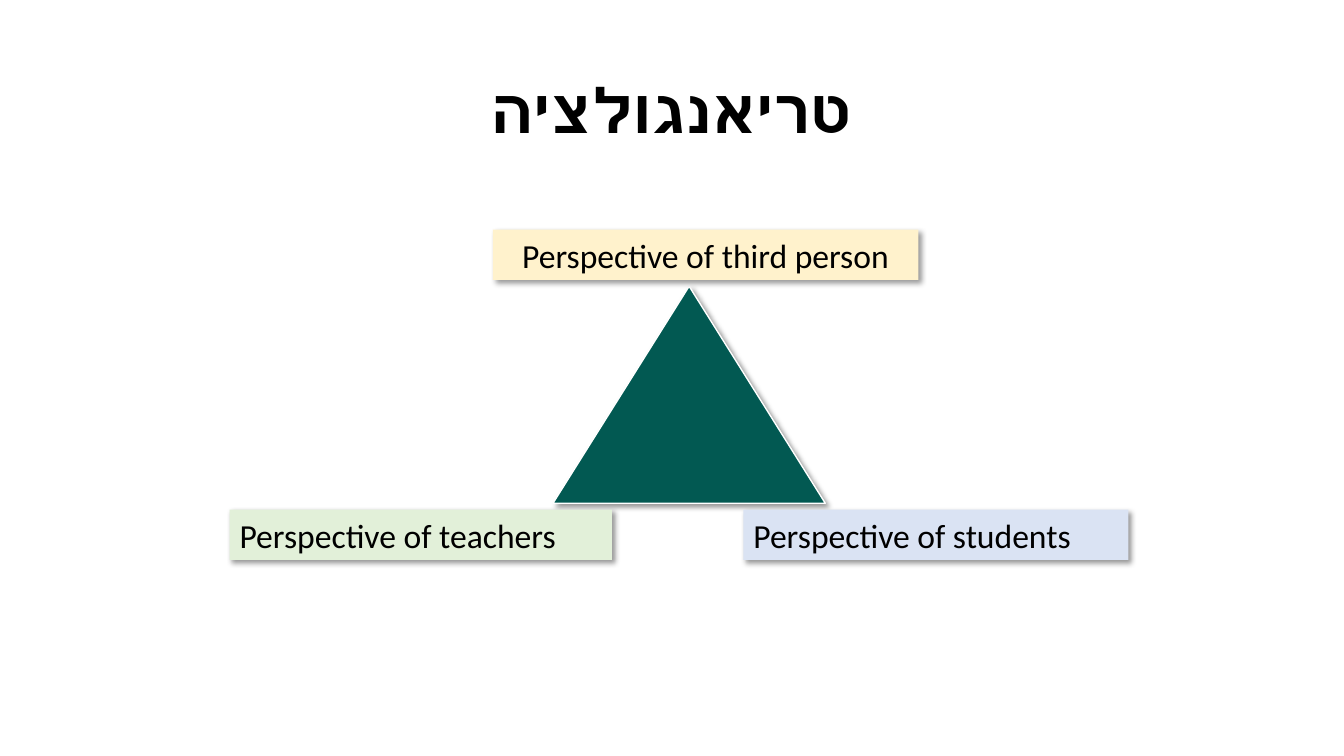
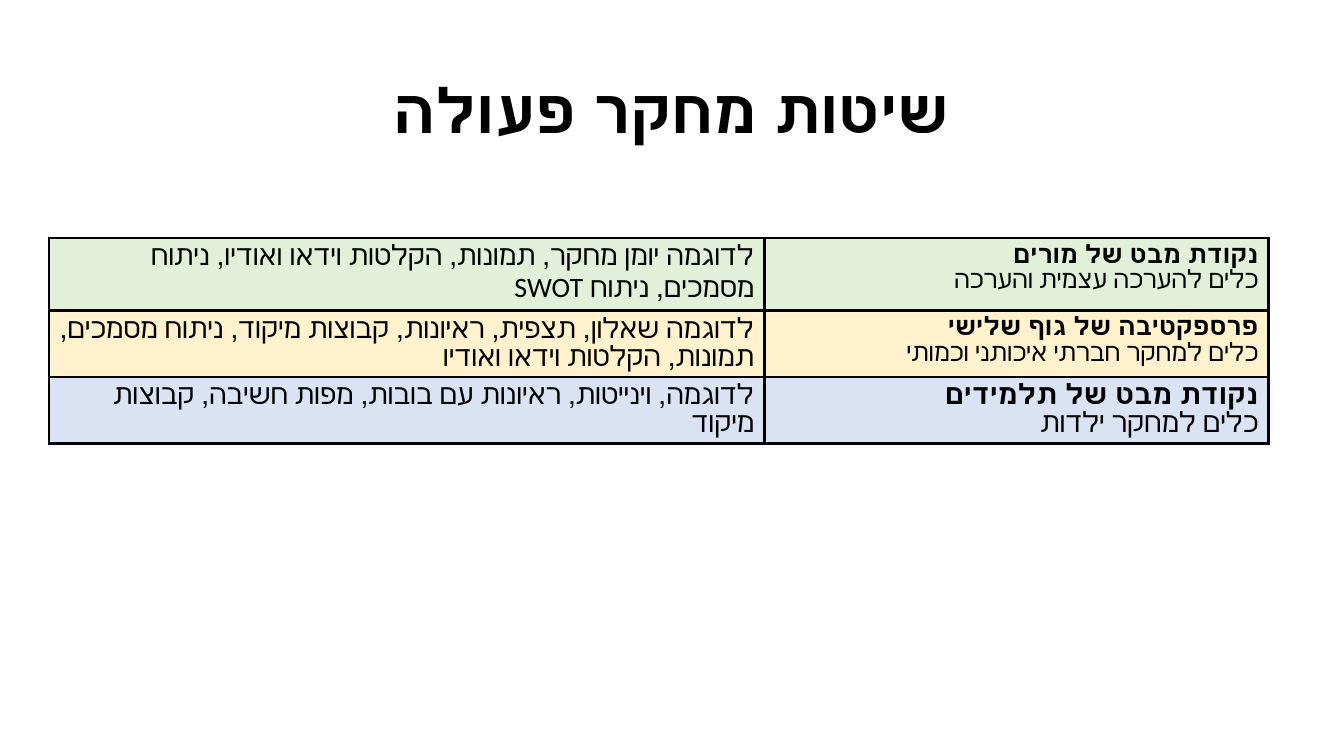
from lxml import etree
from pptx import Presentation
from pptx.dml.color import RGBColor
from pptx.enum.lang import MSO_LANGUAGE_ID
from pptx.enum.shapes import MSO_SHAPE
from pptx.enum.text import MSO_ANCHOR, MSO_AUTO_SIZE, PP_ALIGN
from pptx.oxml.ns import qn
from pptx.util import Pt

BLACK = RGBColor(0x00, 0x00, 0x00)
WHITE = RGBColor(0xFF, 0xFF, 0xFF)
TEAL = RGBColor(0x02, 0x59, 0x52)
GREEN = RGBColor(0xE2, 0xF0, 0xD9)
BLUE = RGBColor(0xDA, 0xE3, 0xF3)
CREAM = RGBColor(0xFF, 0xF2, 0xCC)

LEFT, MID, RIGHT = PP_ALIGN.LEFT, PP_ALIGN.CENTER, PP_ALIGN.RIGHT
CENTRE, TOP = MSO_ANCHOR.MIDDLE, MSO_ANCHOR.TOP
HEBREW = MSO_LANGUAGE_ID.HEBREW

# Formats shared by all slides
BASE = {"name": "Calibri", "bold": False}
TITLE = {"size": Pt(44), "bold": True, "language_id": HEBREW}
LABEL = {"size": Pt(24)}
TITLE_BOX = (66, 29, 828, 104)
BORDER = 2.2


def pts(*nums):
    return [Pt(n) for n in nums]


def style(run, form):
    for key, val in {**BASE, **form}.items():
        setattr(run.font, key, val)
    run.font.color.rgb = BLACK


def write(para, text, form, align):
    para.alignment = align
    run = para.add_run()
    run.text = text
    style(run, form)


def add_xml(parent, tag, **attrs):
    node = etree.SubElement(parent, qn(tag))
    for key, val in attrs.items():
        node.set(key, str(val))
    return node


def new_slide(deck, text):
    """Title-only slide with its heading."""
    slide = deck.slides.add_slide(deck.slide_layouts[5])
    head = slide.shapes.title
    head.left, head.top, head.width, head.height = pts(*TITLE_BOX)
    frame = head.text_frame
    frame.auto_size = MSO_AUTO_SIZE.NONE
    frame.vertical_anchor = CENTRE
    para = frame.paragraphs[0]
    para.line_spacing = 0.9
    write(para, text, TITLE, MID)
    return slide


def shade(shape):
    """Soft shadow towards the lower right."""
    shape.shadow.inherit = False
    effects = shape.element.spPr.find(qn("a:effectLst"))
    outer = add_xml(effects, "a:outerShdw", blurRad=Pt(4), dist=Pt(3),
                    dir=45 * 60000, algn="tl", rotWithShape=0)
    black = add_xml(outer, "a:srgbClr", val=BLACK)
    add_xml(black, "a:alpha", val=40000)


def add_label(group, box, text, fill, align):
    label = group.shapes.add_textbox(*pts(*box))
    label.fill.solid()
    label.fill.fore_color.rgb = fill
    shade(label)
    frame = label.text_frame
    frame.word_wrap = True
    frame.auto_size = MSO_AUTO_SIZE.SHAPE_TO_FIT_TEXT
    write(frame.paragraphs[0], text, LABEL, align)


def add_views(slide, left, top, width, height):
    """Triangle with one label at each corner."""
    group = slide.shapes.add_group_shape()
    tall, gap = 36, 4.5
    low = top + height - tall
    peak = top + tall + gap
    tri = group.shapes.add_shape(
        MSO_SHAPE.ISOSCELES_TRIANGLE,
        *pts(left + 231, peak, 194.5, low - gap - peak))
    tri.fill.solid()
    tri.fill.fore_color.rgb = TEAL
    tri.line.color.rgb = WHITE
    tri.line.width = Pt(1)
    shade(tri)

    labels = [
        (0, low, 273, "Perspective of teachers", GREEN, LEFT),
        (width - 275, low, 275, "Perspective of students", BLUE, LEFT),
        (188, top, 304, "Perspective of third person", CREAM, MID),
    ]
    for shift, y, wide, text, fill, align in labels:
        add_label(group, (left + shift, y, wide, tall), text, fill, align)


def frame_cell(cell, fill):
    """Black border on all sides, then the fill."""
    props = cell._tc.get_or_add_tcPr()
    for side in "LRTB":
        line = add_xml(props, "a:ln" + side, w=Pt(BORDER))
        solid = add_xml(line, "a:solidFill")
        add_xml(solid, "a:srgbClr", val=BLACK)
    cell.fill.solid()
    cell.fill.fore_color.rgb = fill


def fill_cell(cell, lines, size, anchor, fill):
    """Right-to-left lines, each with its bold flag."""
    frame_cell(cell, fill)
    cell.vertical_anchor = anchor
    frame = cell.text_frame
    for num, (text, bold) in enumerate(lines):
        para = frame.add_paragraph() if num else frame.paragraphs[0]
        form = {"size": Pt(size), "bold": bold, "language_id": HEBREW}
        write(para, text, form, RIGHT)
        para._p.get_or_add_pPr().set("rtl", "1")


def add_tools(slide, left, top, width, height):
    """Table of examples and the views they serve."""
    rows = [
        (GREEN, 52, 18,
         "לדוגמה יומן מחקר, תמונות, הקלטות וידאו ואודיו, ניתוח מסמכים, ניתוח SWOT",
         "נקודת מבט של מורים", "כלים להערכה עצמית והערכה"),
        (CREAM, 47, 18,
         "לדוגמה שאלון, תצפית, ראיונות, קבוצות מיקוד, ניתוח מסמכים, תמונות, הקלטות וידאו ואודיו",
         "פרספקטיבה של גוף שלישי", "כלים למחקר חברתי איכותני וכמותי"),
        (BLUE, 47, 20,
         "לדוגמה, וינייטות, ראיונות עם בובות, מפות חשיבה, קבוצות מיקוד",
         "נקודת מבט של תלמידים", "כלים למחקר ילדות"),
    ]
    table = slide.shapes.add_table(
        len(rows), 2, *pts(left, top, width, height)).table
    table.first_row = table.horz_banding = False
    wide = 511
    table.columns[0].width = Pt(wide)
    table.columns[1].width = Pt(width - wide)
    for num, (fill, tall, size, tools, view, kind) in enumerate(rows):
        table.rows[num].height = Pt(tall)
        fill_cell(table.cell(num, 0), [(tools, False)], 20, CENTRE, fill)
        fill_cell(table.cell(num, 1), [(view, True), (kind, False)],
                  size, TOP, fill)


def main():
    deck = Presentation()
    deck.slide_width, deck.slide_height = pts(960, 540)
    add_views(new_slide(deck, "טריאנגולציה"), 164, 164, 642, 236)
    add_tools(new_slide(deck, "שיטות מחקר פעולה"), 35, 170, 871, 146)
    deck.save("out.pptx")


if __name__ == "__main__":
    main()
